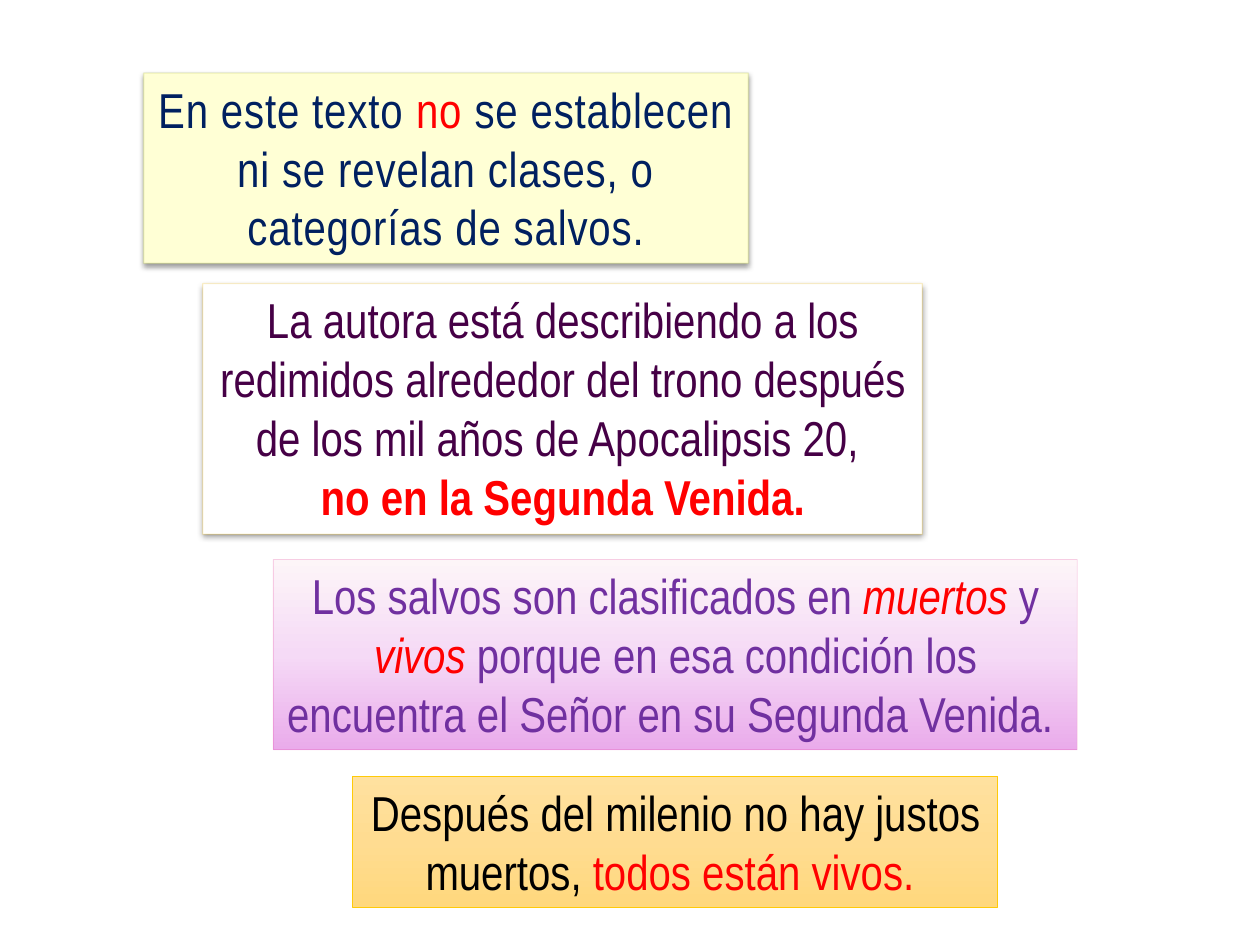
from lxml.etree import SubElement
from pptx import Presentation
from pptx.dml.color import RGBColor
from pptx.enum.shapes import MSO_SHAPE as Shape
from pptx.enum.text import MSO_ANCHOR as Anchor, MSO_AUTO_SIZE as AutoSize, PP_ALIGN as Align
from pptx.oxml.ns import qn
from pptx.util import Inches, Pt

NAVY = RGBColor(0x00, 0x20, 0x60)
PLUM = RGBColor(0x46, 0x00, 0x46)
PURPLE = RGBColor(0x70, 0x30, 0xA0)
BLACK = RGBColor(0x00, 0x00, 0x00)
RED = RGBColor(0xFF, 0x00, 0x00)
WHITE = RGBColor(0xFF, 0xFF, 0xFF)
CREAM = RGBColor(0xFF, 0xFF, 0xD5)
OLIVE = RGBColor(0xA5, 0xB6, 0x23)
AMBER = RGBColor(0xFE, 0xC2, 0x00)
PINK = RGBColor(0xE3, 0x2D, 0x91)
GOLD = RGBColor(0xFF, 0xCA, 0x08)
ORCHID_FADE = (RGBColor(0xFD, 0xF5, 0xF8), RGBColor(0xF5, 0xDA, 0xF6), RGBColor(0xEA, 0xAB, 0xEB))
GOLD_FADE = (RGBColor(0xFF, 0xE1, 0x9F), RGBColor(0xFF, 0xDC, 0x91), RGBColor(0xFF, 0xD8, 0x7D))


class StatementSlide:
    font = "Arial Narrow"
    size = Pt(28)

    def __init__(self, slide):
        self.slide = slide

    def box(self, left, top, width, height, line, weight, opacity=100):
        box = self.slide.shapes.add_shape(
            Shape.RECTANGLE, Inches(left), Inches(top), Inches(width), Inches(height))
        box.shadow.inherit = False
        box.line.color.rgb = line
        box.line.width = Pt(weight)
        if opacity < 100:
            color = box._element.spPr.find(".//" + qn("a:ln") + "//" + qn("a:srgbClr"))
            SubElement(color, qn("a:alpha"), val=str(opacity * 1000))
        return box

    def solid(self, box, color):
        box.fill.solid()
        box.fill.fore_color.rgb = color

    def fade(self, box, colors):
        """Fill from top to bottom with evenly spaced colours."""
        box.fill.gradient()
        box.fill.gradient_angle = 270
        stops = box._element.spPr.find(".//" + qn("a:gsLst"))
        for stop in list(stops):
            stops.remove(stop)
        for i, color in enumerate(colors):
            stop = SubElement(stops, qn("a:gs"), pos=str(100000 * i // (len(colors) - 1)))
            SubElement(stop, qn("a:srgbClr"), val=str(color))

    def drop_shadow(self, box):
        effects = box._element.spPr.find(qn("a:effectLst"))
        shadow = SubElement(effects, qn("a:outerShdw"), blurRad=str(Pt(3.1)), dist=str(Pt(1.6)),
                            dir="5400000", rotWithShape="0")
        color = SubElement(shadow, qn("a:srgbClr"), val="000000")
        SubElement(color, qn("a:alpha"), val="38000")

    def statement(self, box, paragraphs, spacing=0):
        """Each paragraph is a list of (text, colour, style) runs."""
        frame = box.text_frame
        frame.word_wrap = True
        frame.auto_size = AutoSize.SHAPE_TO_FIT_TEXT
        frame.vertical_anchor = Anchor.TOP
        for i, runs in enumerate(paragraphs):
            paragraph = frame.add_paragraph() if i else frame.paragraphs[0]
            paragraph.alignment = Align.CENTER
            for text, color, style in runs:
                run = paragraph.add_run()
                run.text = text
                run.font.name = self.font
                run.font.size = self.size
                run.font.color.rgb = color
                run.font.bold = style == "bold"
                run.font.italic = style == "italic"
                if spacing:
                    run.font._element.set("spc", str(int(spacing * 100)))


def main():
    deck = Presentation()
    deck.slide_width, deck.slide_height = Inches(10), Inches(7.5)
    page = StatementSlide(deck.slides.add_slide(deck.slide_layouts[6]))

    # No classes among the saved
    classes = page.box(1.14, 0.58, 4.8, 1.51, OLIVE, 0.75, opacity=20)
    page.solid(classes, CREAM)
    page.drop_shadow(classes)
    page.statement(classes, [[
        ("En este texto ", NAVY, ""),
        ("no ", RED, ""),
        ("se establecen ni se revelan clases, o categorías de salvos.", NAVY, ""),
    ]], spacing=0.5)

    # The redeemed around the throne
    throne = page.box(1.61, 2.25, 5.71, 1.99, AMBER, 0.75, opacity=20)
    page.solid(throne, WHITE)
    page.drop_shadow(throne)
    page.statement(throne, [
        [("La autora está describiendo a los redimidos alrededor del trono "
          "después de los mil años de Apocalipsis 20, ", PLUM, "")],
        [("no en la Segunda Venida.", RED, "bold")],
    ])

    # The dead and the living
    condition = page.box(2.17, 4.44, 6.38, 1.51, PINK, 0.5, opacity=20)
    page.fade(condition, ORCHID_FADE)
    page.statement(condition, [[
        ("Los salvos son clasificados en ", PURPLE, ""),
        ("muertos ", RED, "italic"),
        ("y ", PURPLE, ""),
        ("vivos ", RED, "italic"),
        ("porque en esa condición los encuentra el Señor en su Segunda Venida. ", PURPLE, ""),
    ]])

    # After the millennium
    millennium = page.box(2.8, 6.16, 5.12, 1.04, GOLD, 0.5)
    page.fade(millennium, GOLD_FADE)
    page.statement(millennium, [[
        ("Después del milenio no hay justos muertos, ", BLACK, ""),
        ("todos están vivos. ", RED, ""),
    ]])

    deck.save("out.pptx")


if __name__ == "__main__":
    main()
